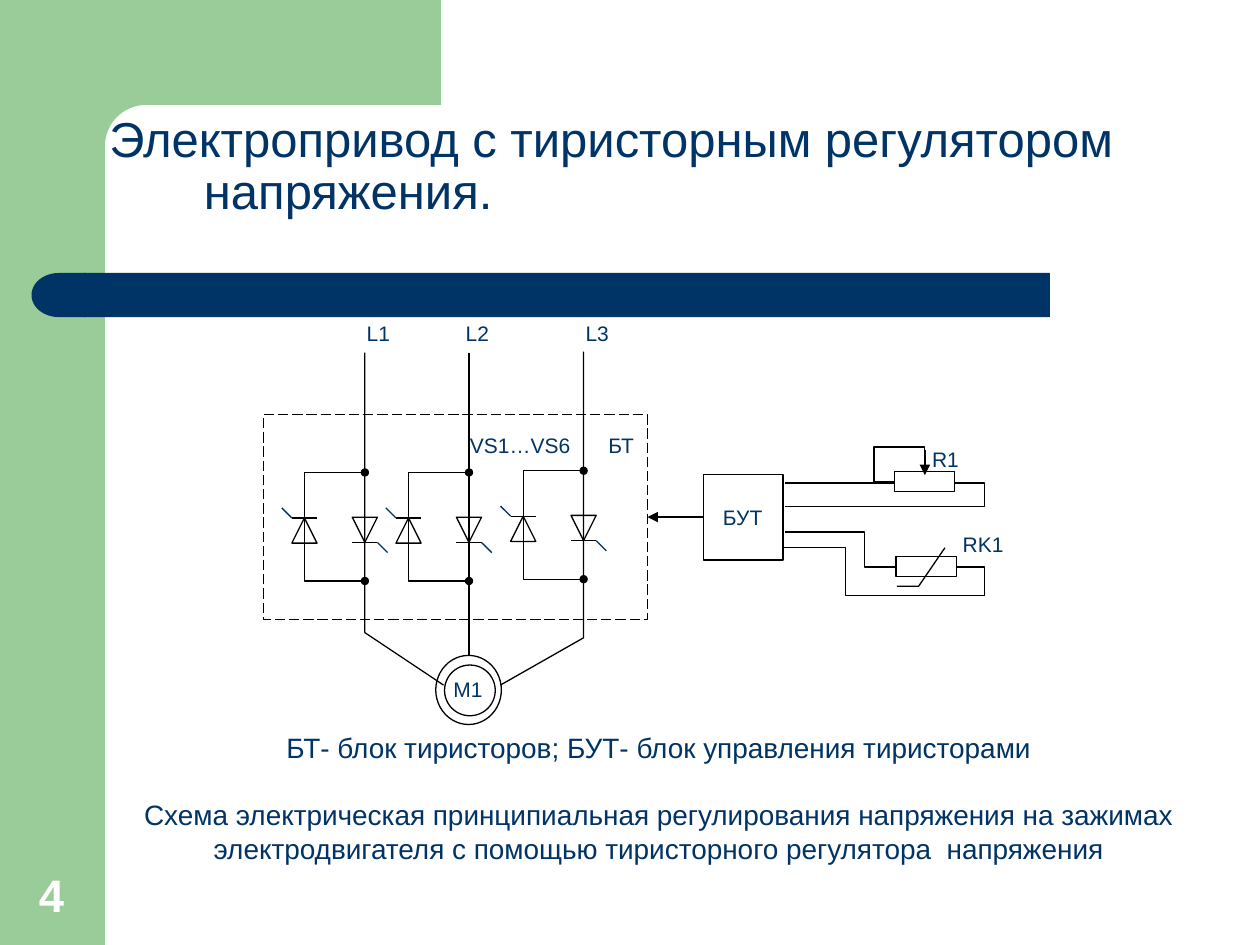
"""Builds a slide with the circuit of a drive with a thyristor voltage regulator."""
from math import cos, pi, sin

from lxml.etree import SubElement
from pptx import Presentation
from pptx.dml.color import RGBColor
from pptx.enum.dml import MSO_LINE
from pptx.enum.shapes import MSO_CONNECTOR, MSO_SHAPE
from pptx.enum.text import MSO_ANCHOR, PP_ALIGN
from pptx.oxml.ns import qn
from pptx.util import Pt

NAVY, GREEN, WHITE, BLACK = "003366", "99CC99", "FFFFFF", "000000"


def paint(sp, fill=None, line=None):
    sp.shadow.inherit = False
    if fill:
        sp.fill.solid()
        sp.fill.fore_color.rgb = RGBColor.from_string(fill)
    else:
        sp.fill.background()
    if line:
        sp.line.color.rgb = RGBColor.from_string(line)
        sp.line.width = Pt(0.75)
    else:
        sp.line.fill.background()
    return sp


def text(paras, box, size=12, color=NAVY, bold=False, align=PP_ALIGN.LEFT,
         anchor=MSO_ANCHOR.TOP, spacing=None, gap=0, hang=0):
    tf = s.shapes.add_textbox(*map(Pt, box)).text_frame
    tf.word_wrap = True
    tf.vertical_anchor = anchor
    for i, t in enumerate(paras.split("\n")):
        p = tf.add_paragraph() if i else tf.paragraphs[0]
        p.alignment = align
        p.line_spacing = spacing
        p.space_before = Pt(gap if i else 0)
        if hang:
            pPr = p._p.get_or_add_pPr()
            pPr.set("marL", str(Pt(hang)))
            pPr.set("indent", str(-Pt(hang)))
        r = p.add_run()
        r.text = t
        r.font.name = "Arial"
        r.font.size = Pt(size)
        r.font.bold = bold
        r.font.color.rgb = RGBColor.from_string(color)


prs = Presentation()
prs.slide_width, prs.slide_height = Pt(720), Pt(540)
s = prs.slides.add_slide(prs.slide_layouts[6])

paint(s.shapes.add_shape(MSO_SHAPE.RECTANGLE, 0, 0, Pt(60), Pt(540)), GREEN)
arc = [(83.5 - 23.5 * sin(a), 83.5 - 23.5 * cos(a)) for a in (i * pi / 32 for i in range(17))]
corner = [(36, 0), (252, 0), (252, 60)] + arc + [(60, 92), (36, 92)]
fb = s.shapes.build_freeform(*map(Pt, corner[0]))
fb.add_line_segments([(Pt(x), Pt(y)) for x, y in corner[1:]])
paint(fb.convert_to_shape(), GREEN)
paint(s.shapes.add_shape(MSO_SHAPE.RECTANGLE, Pt(48), Pt(156), Pt(552), Pt(25.2)), NAVY)
cap = paint(s.shapes.add_shape(MSO_SHAPE.FLOWCHART_DELAY, Pt(18), Pt(156), Pt(31), Pt(25.2)), NAVY)
cap.rotation = 180

text("4", (6.5, 492, 46, 38), size=26, color=WHITE, bold=True,
     align=PP_ALIGN.CENTER, anchor=MSO_ANCHOR.BOTTOM)
text("Электропривод с тиристорным регулятором напряжения.", (55.5, 62, 634, 100),
     size=28, spacing=0.9, hang=54)

bt = paint(s.shapes.add_shape(MSO_SHAPE.RECTANGLE, Pt(150.5), Pt(237), Pt(219.5), Pt(117)),
           WHITE, BLACK)
bt.line.dash_style = MSO_LINE.LONG_DASH
but = paint(s.shapes.add_shape(MSO_SHAPE.RECTANGLE, Pt(402), Pt(271), Pt(45.5), Pt(49)),
            WHITE, BLACK)
for x, y, w, h in ((249, 374.5, 37.5, 39.5), (254, 380, 29, 29)):
    paint(s.shapes.add_shape(MSO_SHAPE.OVAL, Pt(x), Pt(y), Pt(w), Pt(h)), WHITE, BLACK)
paint(s.shapes.add_shape(MSO_SHAPE.RECTANGLE, Pt(499.5), Pt(255.5), Pt(29), Pt(20)), WHITE, BLACK)

wires = [
    [(208.5, 201.5), (208.5, 361.5), (253.5, 391.5)],
    [(333.5, 201), (333.5, 364.5), (286, 391.5)],
    [(448.5, 276), (562.5, 276), (562.5, 289.5), (448.5, 289.5)],
    [(448.5, 304), (494, 304), (494, 324), (562.5, 324), (562.5, 340.5),
     (483, 340.5), (483, 313), (448, 313)],
]
lines = [(268, 201.5, 268, 374.5, BLACK)]
dots = []
for x, y in ((208.5, 296), (268, 296), (333.5, 295)):
    left = x - 34.5
    for cx, top, turn in ((left, y, 0), (x, y - 0.5, 180)):
        sp = paint(s.shapes.add_shape(MSO_SHAPE.ISOSCELES_TRIANGLE, Pt(cx - 7.2), Pt(top),
                                      Pt(14.4), Pt(14.4)), WHITE, BLACK)
        sp.rotation = turn
    wires.append([(x, y + 36), (left, y + 36), (left, y - 26), (x, y - 26)])
    lines += [
        (left - 7.2, y, left + 7.2, y, BLACK),
        (x - 7.2, y + 14, x + 7.2, y + 14, BLACK),
        (left - 7.2, y, left - 13, y - 5.8, NAVY),
        (x + 7.2, y + 14, x + 13, y + 19.8, NAVY),
    ]
    dots += [(x, y - 26), (x, y + 36)]

for pts in wires:
    fb = s.shapes.build_freeform(*map(Pt, pts[0]))
    fb.add_line_segments([(Pt(x), Pt(y)) for x, y in pts[1:]], close=False)
    paint(fb.convert_to_shape(), line=BLACK)
for x, y in dots:
    paint(s.shapes.add_shape(MSO_SHAPE.OVAL, Pt(x - 2), Pt(y - 2), Pt(4), Pt(4)), BLACK, BLACK)
for x, y in ((511, 269.5), (512, 318)):
    paint(s.shapes.add_shape(MSO_SHAPE.RECTANGLE, Pt(x), Pt(y), Pt(34.5), Pt(11.5)), WHITE, BLACK)
fb = s.shapes.build_freeform(Pt(540), Pt(313))
fb.add_line_segments([(Pt(525), Pt(335)), (Pt(512.5), Pt(335))], close=False)
paint(fb.convert_to_shape(), line=BLACK)

control, wiper = (402, 295.5, 370, 295.5, BLACK), (528.5, 257, 528.5, 271.5, BLACK)
for ln in lines + [control, wiper]:
    c = s.shapes.add_connector(MSO_CONNECTOR.STRAIGHT, *map(Pt, ln[:4]))
    c.line.color.rgb = RGBColor.from_string(ln[4])
    c.line.width = Pt(0.75)
    spPr = c._element.spPr
    if ln in (control, wiper):
        SubElement(spPr.find(qn("a:ln")), qn("a:tailEnd"), type="triangle")
    SubElement(spPr, qn("a:effectLst"))
    if ln == control:
        c.begin_connect(but, 1)
        c.end_connect(bt, 3)

for t, x, y, w, h in (
    ("L1", 202.5, 179.5, 36.5, 23),
    ("L2", 259, 179.5, 39.5, 29),
    ("L3", 327.5, 179.5, 39.5, 31.5),
    ("БТ", 340.5, 243.5, 37.5, 29),
    ("VS1…VS6", 261.5, 243.5, 83, 23),
    ("БУТ", 406, 285, 48, 36.5),
    ("R1", 525.5, 251.5, 34, 29),
    ("RK1", 543, 300, 48, 31),
    ("М1", 252, 383, 37.5, 26),
):
    text(t, (x, y, w, h))
text("БТ- блок тиристоров; БУТ- блок управления тиристорами\n"
     "Схема электрическая принципиальная регулирования напряжения на зажимах "
     "электродвигателя с помощью тиристорного регулятора  напряжения",
     (70.5, 414, 612, 97), size=16, align=PP_ALIGN.CENTER, gap=19)

prs.save("out.pptx")
